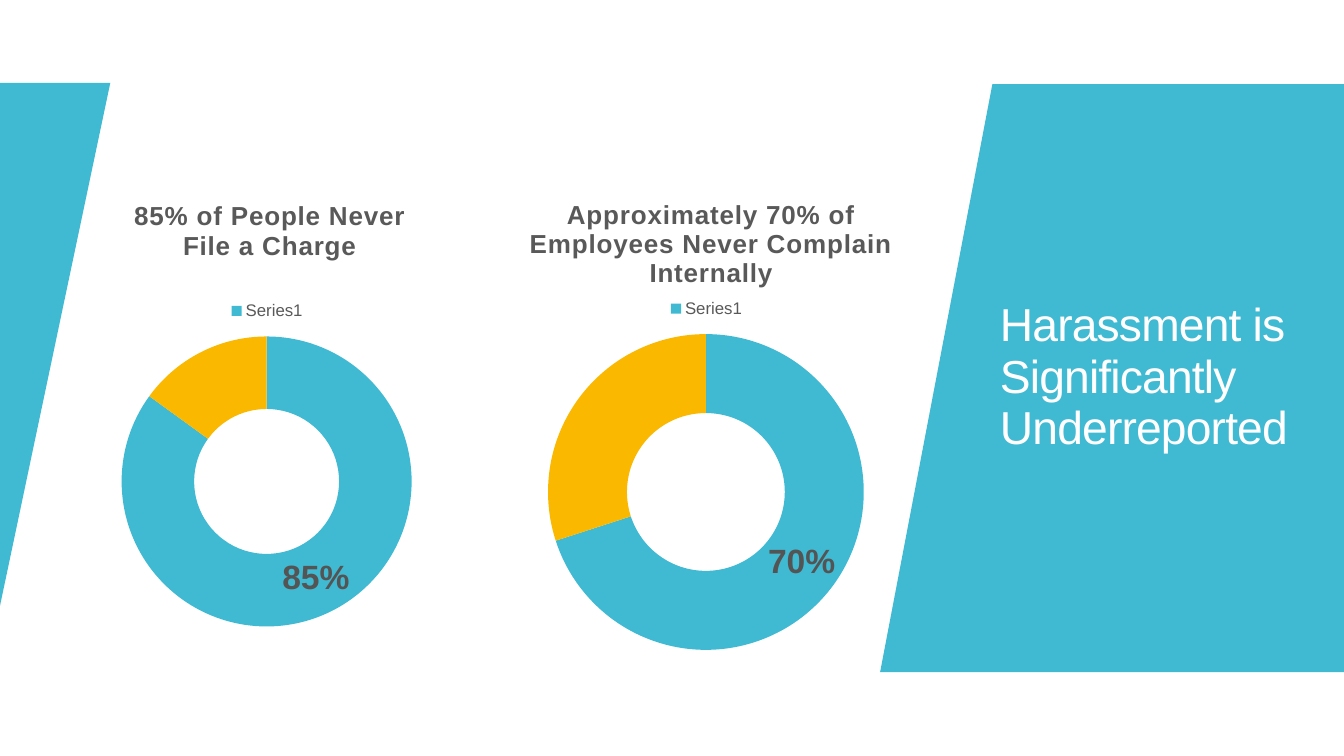
import pptx
import pptx.chart.data
import pptx.dml.color
import pptx.enum.chart
import pptx.enum.text
import pptx.oxml
import pptx.oxml.ns
import pptx.util

Cm, Pt = pptx.util.Cm, pptx.util.Pt
qn = pptx.oxml.ns.qn
TEAL, GOLD, WHITE, GRAY, DARK = "40BAD2", "FAB900", "FFFFFF", "595959", "545454"
WIDE, HIGH = 33.87, 19.05


def color(code):
    return pptx.dml.color.RGBColor.from_string(code)


def style(font, code, **form):
    for key, val in {"name": "Arial", "bold": False, **form}.items():
        setattr(font, key, val)
    font.color.rgb = color(code)


def node(tag, inner=""):
    spaces = pptx.oxml.ns.nsdecls("c", "a")
    return pptx.oxml.parse_xml(f"<c:{tag} {spaces}>{inner}</c:{tag}>")


def pin(owner, after, **place):
    """Give a chart part a fixed layout, as fractions of the chart."""
    old = owner.find(qn("c:layout"))
    if old is not None:
        owner.remove(old)
    modes = "".join(f'<c:{key}Mode val="edge"/>' for key in "xy")
    if "w" in place:
        modes = '<c:layoutTarget val="inner"/>' + modes
    sizes = "".join(f'<c:{key} val="{val:.4f}"/>' for key, val in place.items())
    layout = node("layout", f"<c:manualLayout>{modes}{sizes}</c:manualLayout>")
    if after:
        owner.find(qn(after)).addnext(layout)
    else:
        owner.insert(0, layout)


def panel(slide, box, points):
    """Filled outline; points are relative to the corner of the box."""
    left, top = box
    spots = [(Cm(left + x), Cm(top + y)) for x, y in points]
    form = slide.shapes.build_freeform(*spots[0], scale=1.0)
    form.add_line_segments(spots[1:], close=True)
    shape = form.convert_to_shape()
    shape.shadow.inherit = False
    shape.fill.solid()
    shape.fill.fore_color.rgb = color(TEAL)
    shape.line.fill.background()


def title(slide, box, text):
    frame = slide.shapes.add_textbox(*map(Cm, box)).text_frame
    frame.word_wrap = True
    frame.vertical_anchor = pptx.enum.text.MSO_ANCHOR.MIDDLE
    para = frame.paragraphs[0]
    para.line_spacing = 0.93
    run = para.add_run()
    run.text = text
    style(run.font, WHITE, size=Pt(33))
    run.font._element.set("spc", "-60")


def donut(slide, box, lines, share, ring, head):
    """Ring chart; ring is (top, diameter), head is (top, width) of the title."""
    wide, high = box[2:]
    data = pptx.chart.data.CategoryChartData()
    data.categories = ["", ""]
    data.add_series("Series1", (share, 100 - share))
    kind = pptx.enum.chart.XL_CHART_TYPE.DOUGHNUT
    chart = slide.shapes.add_chart(kind, *map(Cm, box), data).chart
    style(chart.font, "000000", size=Pt(10))
    root = chart._chartSpace.find(qn("c:chart"))
    root.addnext(node("spPr", "<a:noFill/><a:ln><a:noFill/></a:ln>"))

    # Heading
    frame = chart.chart_title.text_frame
    for i, line in enumerate(lines):
        para = frame.add_paragraph() if i else frame.paragraphs[0]
        run = para.add_run()
        run.text = line
        style(run.font, GRAY, size=Pt(18.6), bold=True)
        run.font._element.set("spc", "50")
    pin(root.find(qn("c:title")), "c:tx",
        x=(wide - head[1]) / 2 / wide, y=head[0] / high)

    # Legend
    chart.has_legend = True
    key = chart.legend
    key.position = pptx.enum.chart.XL_LEGEND_POSITION.TOP
    key.include_in_layout = False
    style(key.font, GRAY, size=Pt(12))
    pin(root.find(qn("c:legend")), "c:legendPos",
        x=0.5 - 1.02 / wide, y=(ring[0] - 0.97) / high)

    # Ring
    top, size = ring
    pin(root.find(qn("c:plotArea")), None, x=(wide - size) / 2 / wide,
        y=top / high, w=size / wide, h=size / high)
    plot = chart.plots[0]
    plot.vary_by_categories = False
    series = plot.series[0]
    parts = [series, series.points[0], series.points[1]]
    for part, code in zip(parts, (TEAL, TEAL, GOLD)):
        part.format.fill.solid()
        part.format.fill.fore_color.rgb = color(code)
        part.format.line.fill.background()

    # Share label on the first slice only
    labels = series.data_labels
    form = {"show_percentage": True, "show_value": False,
            "number_format": "0%", "number_format_is_linked": False}
    for name, val in form.items():
        setattr(labels, name, val)
    style(labels.font, DARK, size=Pt(24), bold=True)
    labels._element.insert(
        0, node("dLbl", '<c:idx val="1"/><c:delete val="1"/>'))


def main():
    deck = pptx.Presentation()
    deck.slide_width, deck.slide_height = Cm(WIDE), Cm(HIGH)
    slide = deck.slides.add_slide(deck.slide_layouts[6])

    # Side panels
    panel(slide, (0, 2.09), [(0, 0), (2.78, 0), (0, 13.18)])
    panel(slide, (22.18, 2.12),
          [(2.83, 0), (WIDE - 22.18, 0), (WIDE - 22.18, 14.82), (0, 14.82)])
    title(slide, (24.95, 5.18, 8.18, 8.69),
          "Harassment is Significantly Underreported")

    # Charts
    donut(slide, (0.05, 4.45, 13.34, 12.07),
          ["85% of People Never", "File a Charge"],
          85, (4.03, 7.31), (0.5, 6.83))
    donut(slide, (11.86, 4.22, 11.86, 12.5),
          ["Approximately 70% of Employees Never Complain Internally"],
          70, (4.2, 7.96), (0.62, 9.12))
    deck.save("out.pptx")


if __name__ == "__main__":
    main()
